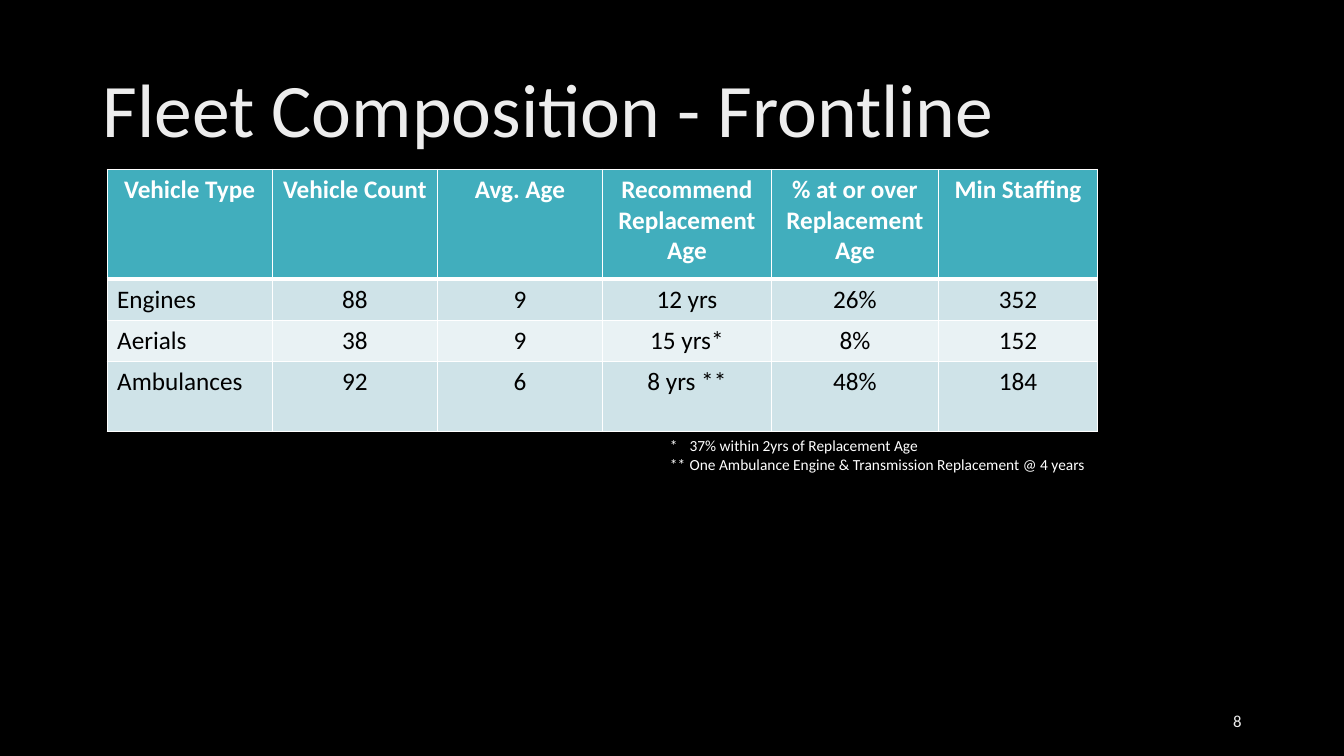
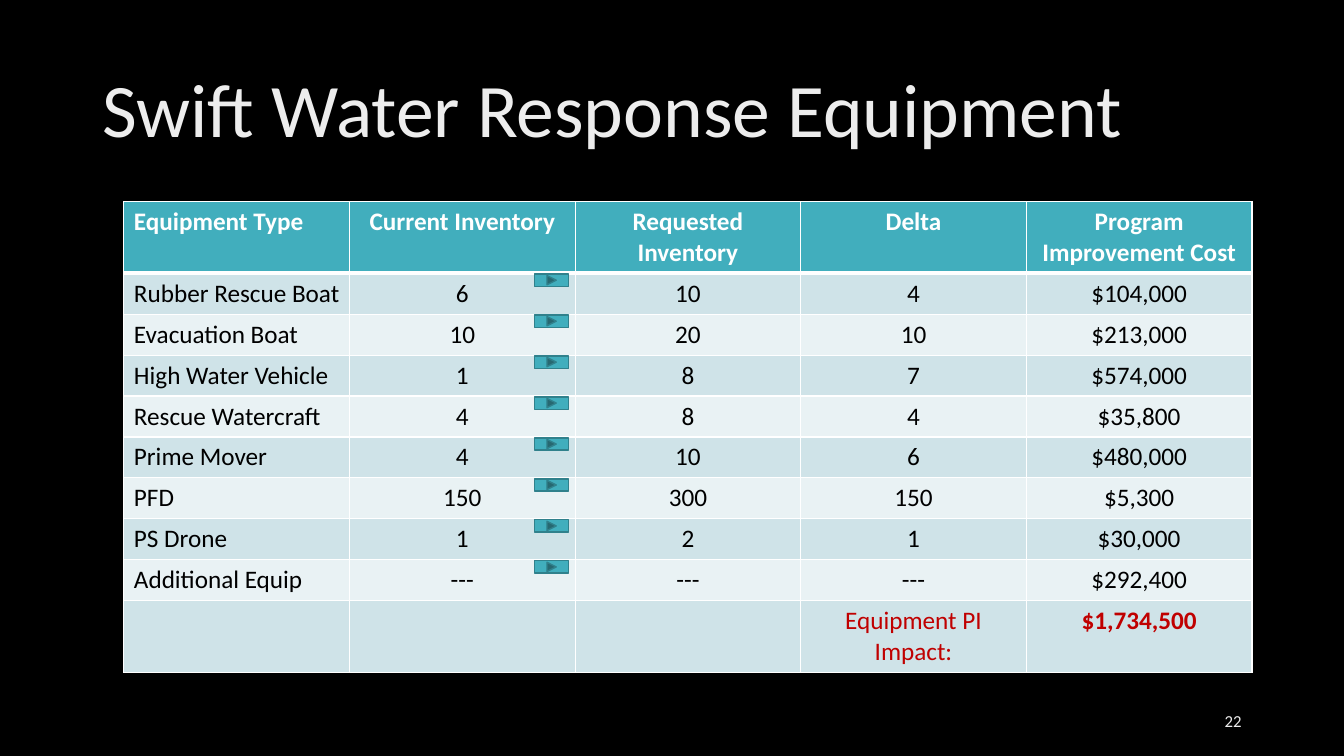
"""Builds two fleet and equipment table slides."""
from lxml.etree import SubElement
from pptx import Presentation
from pptx.dml.color import RGBColor
from pptx.enum.shapes import MSO_SHAPE as SHAPE
from pptx.enum.text import MSO_ANCHOR as ANCHOR, MSO_AUTO_SIZE as AUTO, PP_ALIGN as ALIGN
from pptx.oxml.ns import qn
from pptx.util import Pt

FONT = "Calibri"
BLACK, WHITE, SILVER, RED = "000000", "FFFFFF", "EDEDED", "C00000"
TEAL, DARK_TEAL, BANDS = "41AEBD", "30818C", ("CFE3E8", "E9F2F4")
ROW_H, TWO_LINE_H = 29.25, 51.2

FLEET = [
    ("Vehicle Type", "Vehicle Count", "Avg. Age", "Recommend Replacement Age",
     "% at or over Replacement Age", "Min Staffing"),
    ("Engines", "88", "9", "12 yrs", "26%", "352"),
    ("Aerials", "38", "9", "15 yrs*", "8%", "152"),
    ("Ambulances", "92", "6", "8 yrs **", "48%", "184"),
]
FLEET_COLS = (118, 118, 118, 120.5, 119.5, 113.5)
FLEET_ROWS = (78.5, ROW_H, ROW_H, 50.4)
FOOTNOTES = [
    ("*", "37% within 2yrs of Replacement Age"),
    ("**", "One Ambulance Engine & Transmission Replacement @ 4 years"),
]

EQUIPMENT = [
    ("Equipment Type", "Current Inventory", "Requested Inventory", "Delta",
     "Program Improvement Cost"),
    ("Rubber Rescue Boat", "6", "10", "4", "$104,000"),
    ("Evacuation Boat", "10", "20", "10", "$213,000"),
    ("High Water Vehicle", "1", "8", "7", "$574,000"),
    ("Rescue Watercraft", "4", "8", "4", "$35,800"),
    ("Prime Mover", "4", "10", "6", "$480,000"),
    ("PFD", "150", "300", "150", "$5,300"),
    ("PS Drone", "1", "2", "1", "$30,000"),
    ("Additional Equip", "---", "---", "---", "$292,400"),
    ("", "", "", "Equipment PI Impact:", "$1,734,500"),
]
EQUIPMENT_COLS = (161.15,) * 5
EQUIPMENT_ROWS = (TWO_LINE_H,) + (ROW_H,) * 8 + (TWO_LINE_H,)
EQUIPMENT_TOP = 144


def rgb(value):
    return RGBColor.from_string(value)


def add_run(p, text, size, color, bold=False):
    r = p.add_run()
    r.text = text
    r.font.name, r.font.size, r.font.bold = FONT, Pt(size), bold
    r.font.color.rgb = rgb(color)


def add_box(slide, x, y, w, h, anchor=ANCHOR.TOP):
    tf = slide.shapes.add_textbox(Pt(x), Pt(y), Pt(w), Pt(h)).text_frame
    tf.word_wrap, tf.vertical_anchor = True, anchor
    return tf


def add_slide(prs, title, number):
    slide = prs.slides.add_slide(prs.slide_layouts[5])
    sp = slide.shapes.title
    sp.left, sp.top, sp.width, sp.height = Pt(66), Pt(29), Pt(828), Pt(104)
    tf = sp.text_frame
    tf.auto_size, tf.vertical_anchor = AUTO.NONE, ANCHOR.MIDDLE
    p = tf.paragraphs[0]
    p.alignment, p.line_spacing = ALIGN.LEFT, 0.9
    add_run(p, title, 54, SILVER)
    p = add_box(slide, 678, 500.5, 216, 29, ANCHOR.MIDDLE).paragraphs[0]
    p.alignment = ALIGN.RIGHT
    add_run(p, number, 12, SILVER)
    return slide


def set_borders(cell, top, bottom):
    tc_pr = cell._tc.get_or_add_tcPr()
    for side, width in (("L", 1), ("R", 1), ("T", top), ("B", bottom)):
        ln = SubElement(tc_pr, qn(f"a:ln{side}"), w=str(Pt(width)))
        SubElement(SubElement(ln, qn("a:solidFill")), qn("a:srgbClr"), val=WHITE)


def add_table(slide, x, y, rows, widths, heights, styles=None, left_header=False):
    styles = styles or {}
    table = slide.shapes.add_table(len(rows), len(widths), Pt(x), Pt(y),
                                   Pt(sum(widths)), Pt(sum(heights))).table
    for column, width in zip(table.columns, widths):
        column.width = Pt(width)
    for i, (row, height) in enumerate(zip(rows, heights)):
        table.rows[i].height = Pt(height)
        header = i == 0
        for j, text in enumerate(row):
            cell = table.cell(i, j)
            set_borders(cell, 3 if i == 1 else 1, 3 if header else 1)
            cell.fill.solid()
            cell.fill.fore_color.rgb = rgb(TEAL if header else BANDS[(i - 1) % 2])
            p = cell.text_frame.paragraphs[0]
            left = j == 0 and (left_header or not header)
            p.alignment = ALIGN.LEFT if left else ALIGN.CENTER
            if text:
                color, bold = styles.get((i, j), (WHITE if header else BLACK, header))
                add_run(p, text, 18, color, bold)


def add_footnotes(slide):
    tf = add_box(slide, 471.5, 308, 321, 34)
    for i, (mark, note) in enumerate(FOOTNOTES):
        p = tf.add_paragraph() if i else tf.paragraphs[0]
        p_pr = p._p.get_or_add_pPr()
        p_pr.set("marL", str(Pt(14)))
        p_pr.set("indent", str(-Pt(14)))
        add_run(p, f"{mark}\t{note}", 11, WHITE)


def add_buttons(slide):
    first = EQUIPMENT_TOP + TWO_LINE_H + 0.6
    for i in range(len(EQUIPMENT) - 2):
        sp = slide.shapes.add_shape(SHAPE.ACTION_BUTTON_FORWARD_OR_NEXT, Pt(381.8),
                                    Pt(first + i * ROW_H), Pt(24.5), Pt(8.8))
        sp.shadow.inherit = False
        sp.fill.solid()
        sp.fill.fore_color.rgb = rgb(TEAL)
        sp.line.color.rgb, sp.line.width = rgb(DARK_TEAL), Pt(1)


def main():
    prs = Presentation()
    prs.slide_width, prs.slide_height = Pt(960), Pt(540)
    background = prs.slide_master.background.fill
    background.solid()
    background.fore_color.rgb = rgb(BLACK)

    slide = add_slide(prs, "Fleet Composition - Frontline", "8")
    add_table(slide, 76.5, 121, FLEET, FLEET_COLS, FLEET_ROWS)
    add_footnotes(slide)

    slide = add_slide(prs, "Swift Water Response Equipment", "22")
    totals = {(9, 3): (RED, False), (9, 4): (RED, True)}
    add_table(slide, 88.5, EQUIPMENT_TOP, EQUIPMENT, EQUIPMENT_COLS, EQUIPMENT_ROWS,
              totals, left_header=True)
    add_buttons(slide)
    prs.save("out.pptx")


if __name__ == "__main__":
    main()
